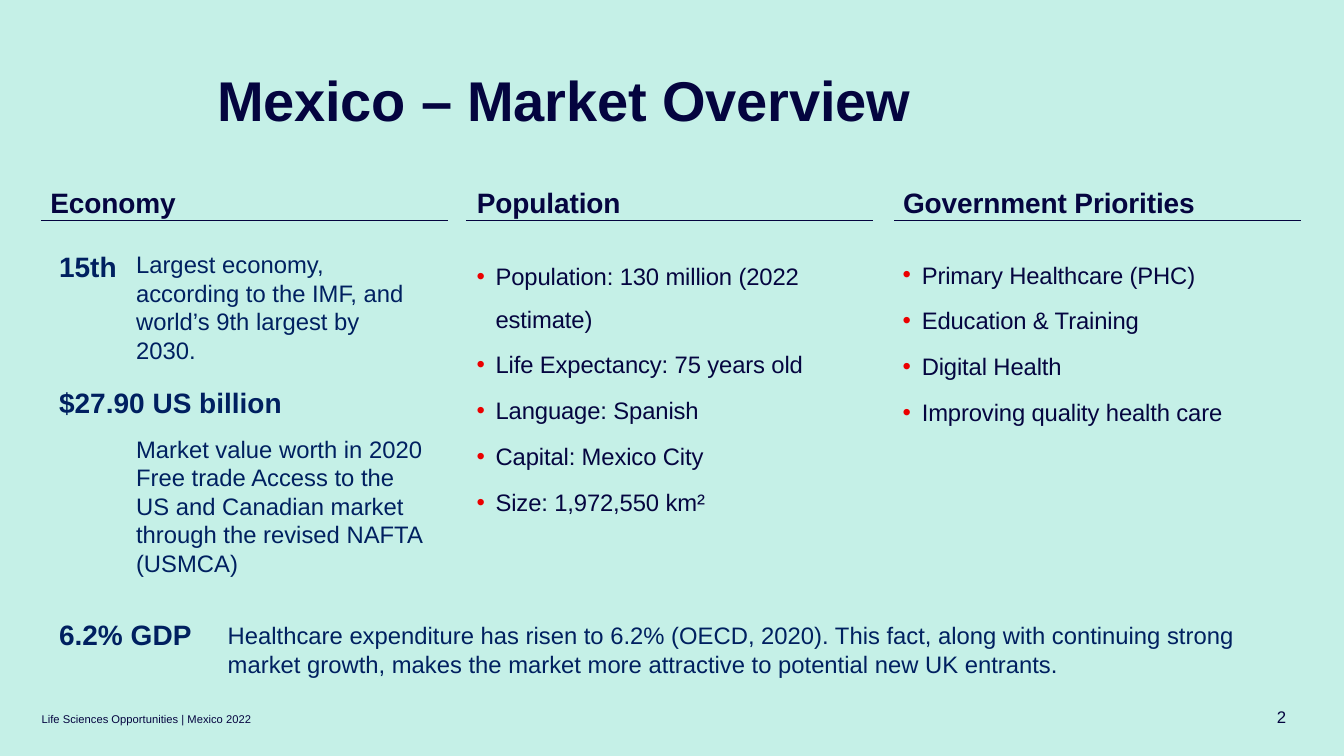
from lxml.etree import SubElement
from pptx import Presentation
from pptx.dml.color import RGBColor
from pptx.enum.shapes import MSO_CONNECTOR as Connector, MSO_SHAPE as Shape
from pptx.enum.text import MSO_ANCHOR as Anchor, MSO_AUTO_SIZE as AutoSize, PP_ALIGN as Align
from pptx.oxml.ns import qn
from pptx.util import Cm, Pt

MINT = RGBColor(0x8C, 0xE2, 0xD0)
INK = RGBColor(0x04, 0x04, 0x3F)
MIDNIGHT = RGBColor(0x05, 0x05, 0x40)
NAVY = RGBColor(0x00, 0x20, 0x60)
RED = RGBColor(0xEB, 0x00, 0x00)

WIDTH, HEIGHT = 33.87, 19.05
FLUSH = dict(margin_left=0, margin_right=0, margin_top=0, margin_bottom=0)
SNUG = dict(FLUSH, margin_top=Cm(0.03))
LIST_FRAME = dict(FLUSH, margin_top=Cm(0.08))
HEADING_PARA = dict(space_before=Pt(1))
LIST_PARA = dict(line_spacing=1.5, space_before=Pt(2.1))

HEADINGS = [
    ("Economy", 1.24, 4.67, 1.03),
    ("Population", 11.99, 8.92, 11.74),
    ("Government Priorities", 22.73, 10.1, 22.53),
]
POPULATION = [
    "Population: 130 million (2022 estimate)",
    "Life Expectancy: 75 years old",
    "Language: Spanish",
    "Capital: Mexico City",
    "Size: 1,972,550 km²",
]
PRIORITIES = [
    "Primary Healthcare (PHC)",
    "Education & Training",
    "Digital Health",
    "Improving quality health care",
]
FIGURES = [
    ("15th", 6.15, 2.18, Anchor.MIDDLE),
    ("$27.90 US billion", 9.6, 6.17, Anchor.TOP),
    ("6.2% GDP", 15.44, 3.89, Anchor.TOP),
]
DETAILS = [
    (["Largest economy, according to the IMF, and world’s 9th largest by 2030."],
     (3.18, 6.15, 7.72, 3.18), Anchor.MIDDLE),
    (["Market value worth in 2020",
      "Free trade Access to the US and Canadian market through the revised NAFTA (USMCA)"],
     (3.18, 10.82, 7.72, 4.62), Anchor.TOP),
    (["Healthcare expenditure has risen to 6.2% (OECD, 2020). This fact, along with "
      "continuing strong market growth, makes the market more attractive to potential "
      "new UK entrants."],
     (5.49, 15.52, 26.59, 1.7), Anchor.TOP),
]


def apply(target, values):
    for name, value in values.items():
        setattr(target, name, value)


def place(box, at):
    apply(box, dict(zip(("left", "top", "width", "height"), map(Cm, at))))


def fill_text(box, lines, size, color, bold=False, spacing=0, indent=0.0, frame=None, para_format=None):
    text_frame = box.text_frame
    apply(text_frame, dict(dict(word_wrap=True, auto_size=AutoSize.SHAPE_TO_FIT_TEXT,
                                vertical_anchor=Anchor.TOP), **(frame or {})))
    for index, line in enumerate(lines):
        para = text_frame.add_paragraph() if index else text_frame.paragraphs[0]
        apply(para, dict(dict(alignment=Align.LEFT), **(para_format or {})))
        if indent:
            para._p.get_or_add_pPr().set("marL", str(Cm(indent)))
        span = para.add_run()
        span.text = line
        apply(span.font, dict(name="Arial", size=Pt(size), bold=bold))
        span.font.color.rgb = color
        if spacing:
            span.font._element.set("spc", str(round(spacing * 100)))


def add_text(slide, at, lines, size, color, **options):
    box = slide.shapes.add_textbox(*map(Cm, at))
    fill_text(box, lines, size, color, **options)


def add_backdrop(slide):
    backdrop = slide.shapes.add_shape(Shape.RECTANGLE, 0, 0, Cm(WIDTH), Cm(HEIGHT))
    backdrop.shadow.inherit = False
    backdrop.line.fill.background()
    backdrop.fill.solid()
    backdrop.fill.fore_color.rgb = MINT
    color = backdrop._element.spPr.find(qn("a:solidFill"))[0]
    SubElement(color, qn("a:alpha"), val="50000")
    tree = slide.shapes._spTree
    tree.remove(backdrop._element)
    tree.insert(2, backdrop._element)


def add_rule(slide, left):
    rule = slide.shapes.add_connector(Connector.STRAIGHT, Cm(left), Cm(5.56), Cm(left + 10.25), Cm(5.56))
    rule.line.width = Pt(0.5)
    rule.line.color.rgb = INK
    SubElement(rule._element.spPr, qn("a:effectLst"))


def fill_list(box, at, lines):
    place(box, at)
    fill_text(box, lines, 17, MIDNIGHT, spacing=-0.1, indent=0.5,
              frame=LIST_FRAME, para_format=LIST_PARA)
    for para in box.text_frame.paragraphs:
        props = para._p.get_or_add_pPr()
        props.set("indent", str(-Cm(0.48)))
        SubElement(SubElement(props, qn("a:buClr")), qn("a:srgbClr"), val=str(RED))
        SubElement(props, qn("a:buFont"), typeface="Arial")
        SubElement(props, qn("a:buChar"), char="•")


def main():
    deck = Presentation()
    apply(deck, dict(slide_width=Cm(WIDTH), slide_height=Cm(HEIGHT)))
    slide = deck.slides.add_slide(deck.slide_layouts[3])
    title, population, priorities = slide.placeholders
    add_backdrop(slide)

    place(title, (5.44, 1.63, 19.99, 1.75))
    fill_text(title, ["Mexico – Market Overview"], 40, INK, bold=True, spacing=-0.1,
              indent=0.03, frame=SNUG, para_format=HEADING_PARA)
    fill_list(population, (11.99, 6.15, 8.36, 6.91), POPULATION)
    fill_list(priorities, (22.73, 6.12, 8.36, 4.65), PRIORITIES)

    for heading, left, width, rule_left in HEADINGS:
        add_text(slide, (left, 4.65, width, 0.89), [heading], 20, MIDNIGHT, bold=True,
                 spacing=-0.1, indent=0.03, frame=SNUG, para_format=HEADING_PARA)
        add_rule(slide, rule_left)
    for figure, top, width, anchor in FIGURES:
        add_text(slide, (1.24, top, width, 1.12), [figure], 20, NAVY, bold=True,
                 frame=dict(word_wrap=False, vertical_anchor=anchor))
    for lines, at, anchor in DETAILS:
        add_text(slide, at, lines, 17, NAVY, frame=dict(vertical_anchor=anchor))

    add_text(slide, (1.02, 17.96, 7.32, 0.33), ["Life Sciences Opportunities | Mexico 2022"],
             8, MIDNIGHT, indent=0.03, frame=FLUSH, para_format=dict(space_before=Pt(0.2)))
    add_text(slide, (32.08, 17.81, 0.71, 0.53), ["2"], 12, INK, indent=0.1,
             frame=FLUSH, para_format=dict(line_spacing=Pt(14.2)))
    deck.save("out.pptx")


if __name__ == "__main__":
    main()
